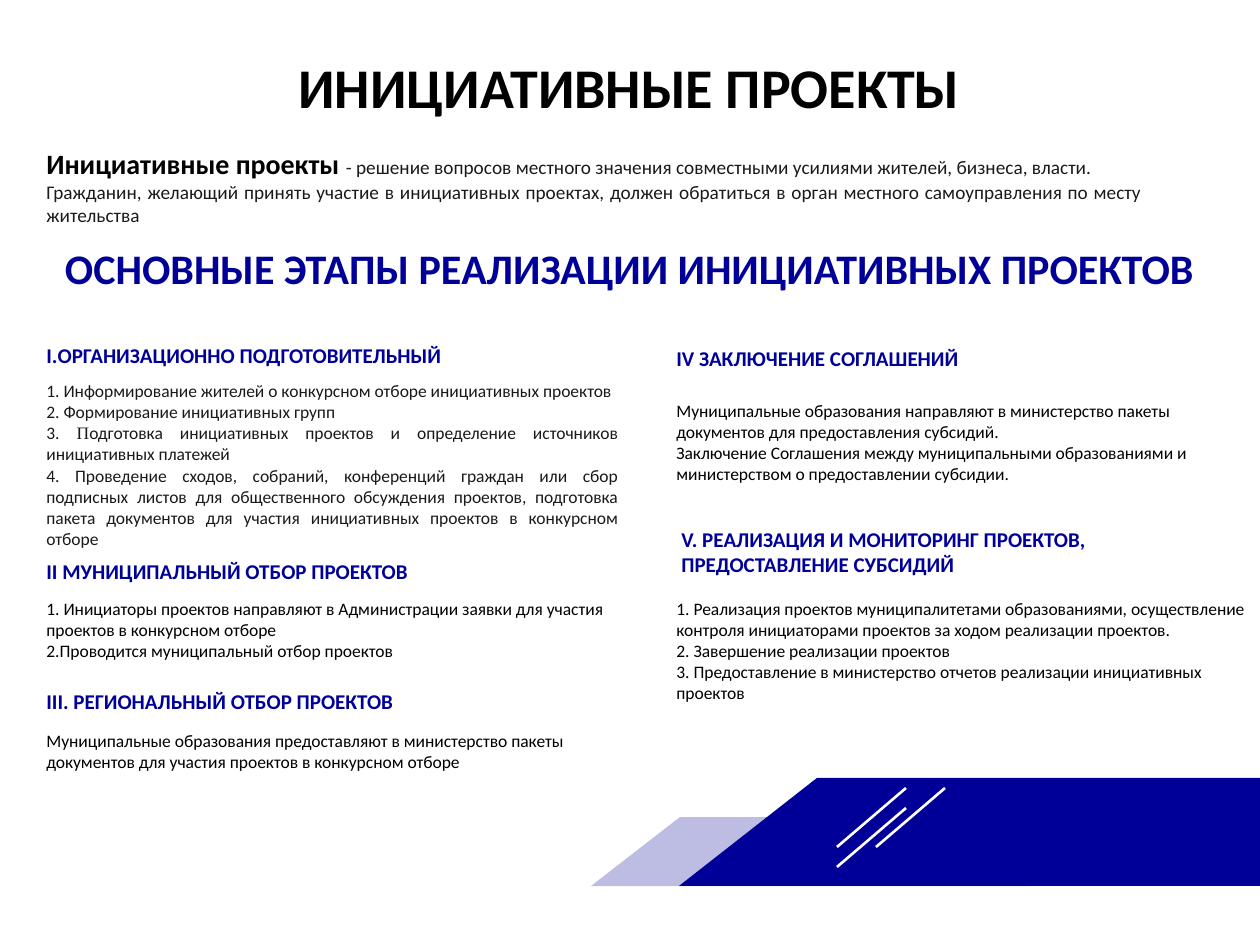
from lxml import etree
from pptx import Presentation
from pptx import util as u
from pptx.dml import color
from pptx.enum import shapes, text
from pptx.oxml import ns

SCALE = 914400 / 126
NAVY, BLACK, GRAY, WHITE = "000099", "000000", "1A1A1A", "FFFFFF"
LEFT, JUSTIFY, CENTER = text.PP_ALIGN.LEFT, text.PP_ALIGN.JUSTIFY, text.PP_ALIGN.CENTER

STAGES = [
    ("I.ОРГАНИЗАЦИОННО ПОДГОТОВИТЕЛЬНЫЙ", (34, 336, 576, 38), JUSTIFY,
     ["1. Информирование жителей о конкурсном отборе инициативных проектов",
      "2. Формирование инициативных групп",
      [("3. ", {}), ("П", {"font": "Times New Roman"}),
       ("одготовка инициативных проектов и определение источников инициативных платежей", {})],
      "4. Проведение сходов, собраний, конференций граждан или сбор подписных листов "
      "для общественного обсуждения проектов, подготовка пакета документов для участия "
      "инициативных проектов в конкурсном отборе"],
     (34, 373, 596, 183), JUSTIFY, GRAY),
    ("II МУНИЦИПАЛЬНЫЙ ОТБОР ПРОЕКТОВ", (34, 552, 576, 38), LEFT,
     ["1. Инициаторы проектов направляют в Администрации заявки для участия "
      "проектов в конкурсном отборе",
      "2.Проводится муниципальный отбор проектов"],
     (34, 591, 596, 77), LEFT, BLACK),
    ("III. РЕГИОНАЛЬНЫЙ ОТБОР ПРОЕКТОВ", (34, 682, 576, 38), JUSTIFY,
     ["Муниципальные образования предоставляют в министерство пакеты документов "
      "для участия проектов в конкурсном отборе"],
     (34, 722, 596, 58), LEFT, BLACK),
    ("IV ЗАКЛЮЧЕНИЕ СОГЛАШЕНИЙ", (664, 339, 576, 38), LEFT,
     ["Муниципальные образования направляют в министерство пакеты документов "
      "для предоставления субсидий.",
      "Заключение Соглашения между муниципальными образованиями и министерством "
      "о предоставлении субсидии."],
     (664, 383, 596, 118), LEFT, BLACK),
    ("V. РЕАЛИЗАЦИЯ И МОНИТОРИНГ ПРОЕКТОВ, ПРЕДОСТАВЛЕНИЕ СУБСИДИЙ",
     (669, 520, 576, 63), LEFT,
     ["1. Реализация проектов муниципалитетами образованиями, осуществление контроля "
      "инициаторами проектов за ходом реализации проектов.",
      "2. Завершение реализации проектов",
      "3. Предоставление в министерство отчетов реализации инициативных проектов"],
     (664, 581, 596, 140), LEFT, BLACK),
]


def px(length):
    return u.Emu(round(length * SCALE))


def rgb(value):
    return color.RGBColor.from_string(value)


def style_span(span, size, tone, bold=False, font="Calibri"):
    span.font.size = u.Pt(size)
    span.font.color.rgb = rgb(tone)
    span.font.bold = bold
    span.font.name = font


def add_text(page, place, paragraphs, align, **style):
    box = page.shapes.add_textbox(*map(px, place))
    frame = box.text_frame
    frame.word_wrap = True
    frame.auto_size = text.MSO_AUTO_SIZE.SHAPE_TO_FIT_TEXT
    frame.vertical_anchor = text.MSO_ANCHOR.MIDDLE
    for index, content in enumerate(paragraphs):
        para = frame.paragraphs[0] if index == 0 else frame.add_paragraph()
        para.alignment = align
        spans = [(content, {})] if isinstance(content, str) else content
        for words, changes in spans:
            span = para.add_run()
            span.text = words
            style_span(span, **{**style, **changes})


def add_stage(page, heading, heading_place, heading_align, body, body_place, body_align, tone):
    add_text(page, heading_place, [heading], heading_align, size=12, tone=NAVY, bold=True)
    add_text(page, body_place, body, body_align, size=10, tone=tone)


def add_band(page, points, alpha=None):
    builder = page.shapes.build_freeform(*points[0], scale=SCALE)
    builder.add_line_segments(points[1:], close=True)
    band = builder.convert_to_shape()
    band.shadow.inherit = False
    band.fill.solid()
    band.fill.fore_color.rgb = rgb(NAVY)
    band.line.fill.background()
    if alpha is not None:
        tone = band.fill._xPr.find(".//" + ns.qn("a:srgbClr"))
        etree.SubElement(tone, ns.qn("a:alpha")).set("val", str(alpha * 1000))


def add_stroke(page, left, bottom):
    ends = (left, bottom, left + 69, bottom - 59)
    stroke = page.shapes.add_connector(shapes.MSO_CONNECTOR.STRAIGHT, *map(px, ends))
    stroke.line.color.rgb = rgb(WHITE)
    stroke.line.width = u.Pt(1.5)
    etree.SubElement(stroke._element.spPr, ns.qn("a:effectLst"))


def main():
    deck = Presentation()
    deck.slide_width, deck.slide_height = px(1260), px(945)
    page = deck.slides.add_slide(deck.slide_layouts[6])

    add_text(page, (34, 38, 1191, 97), ["ИНИЦИАТИВНЫЕ ПРОЕКТЫ"], CENTER,
             size=32, tone=BLACK, bold=True)
    definition = [
        [("Инициативные проекты ", {"size": 16, "tone": BLACK, "bold": True}),
         ("- решение вопросов местного значения совместными усилиями жителей, "
          "бизнеса, власти.", {})],
        "Гражданин, желающий принять участие в инициативных проектах, должен обратиться "
        "в орган местного самоуправления по месту жительства",
    ]
    add_text(page, (34, 140, 1121, 93), definition, JUSTIFY, size=11, tone=GRAY)
    add_text(page, (34, 236, 1191, 63), ["ОСНОВНЫЕ ЭТАПЫ РЕАЛИЗАЦИИ ИНИЦИАТИВНЫХ ПРОЕКТОВ"],
             CENTER, size=24, tone=NAVY, bold=True)

    for stage in STAGES:
        add_stage(page, *stage)

    add_band(page, [(817, 778), (1260, 778), (1260, 886), (679, 886)])
    add_band(page, [(680, 817), (1030, 817), (1030, 886), (591, 886)], alpha=26)
    for left, bottom in [(837, 847), (837, 867), (876, 847)]:
        add_stroke(page, left, bottom)

    deck.save("out.pptx")


if __name__ == "__main__":
    main()
